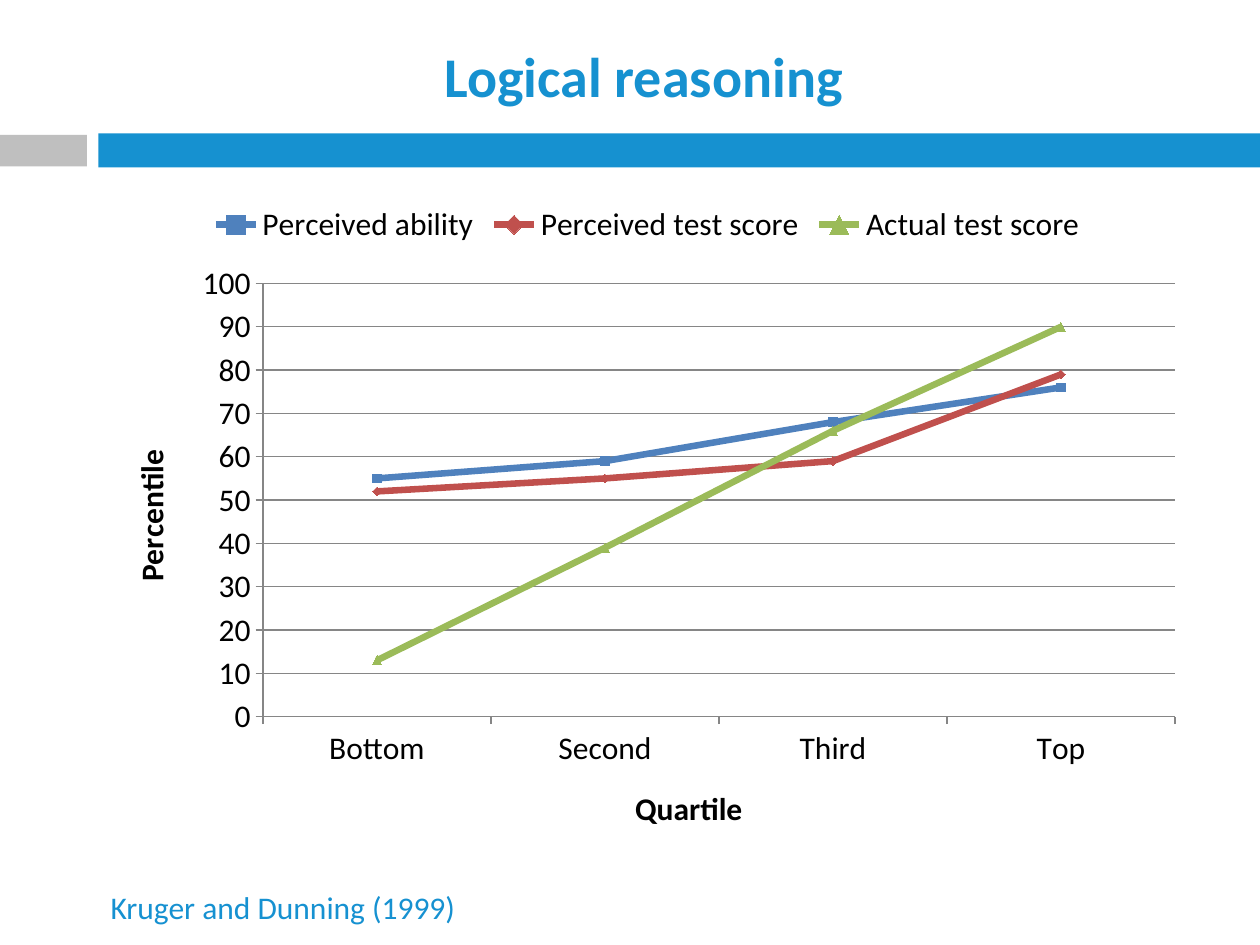
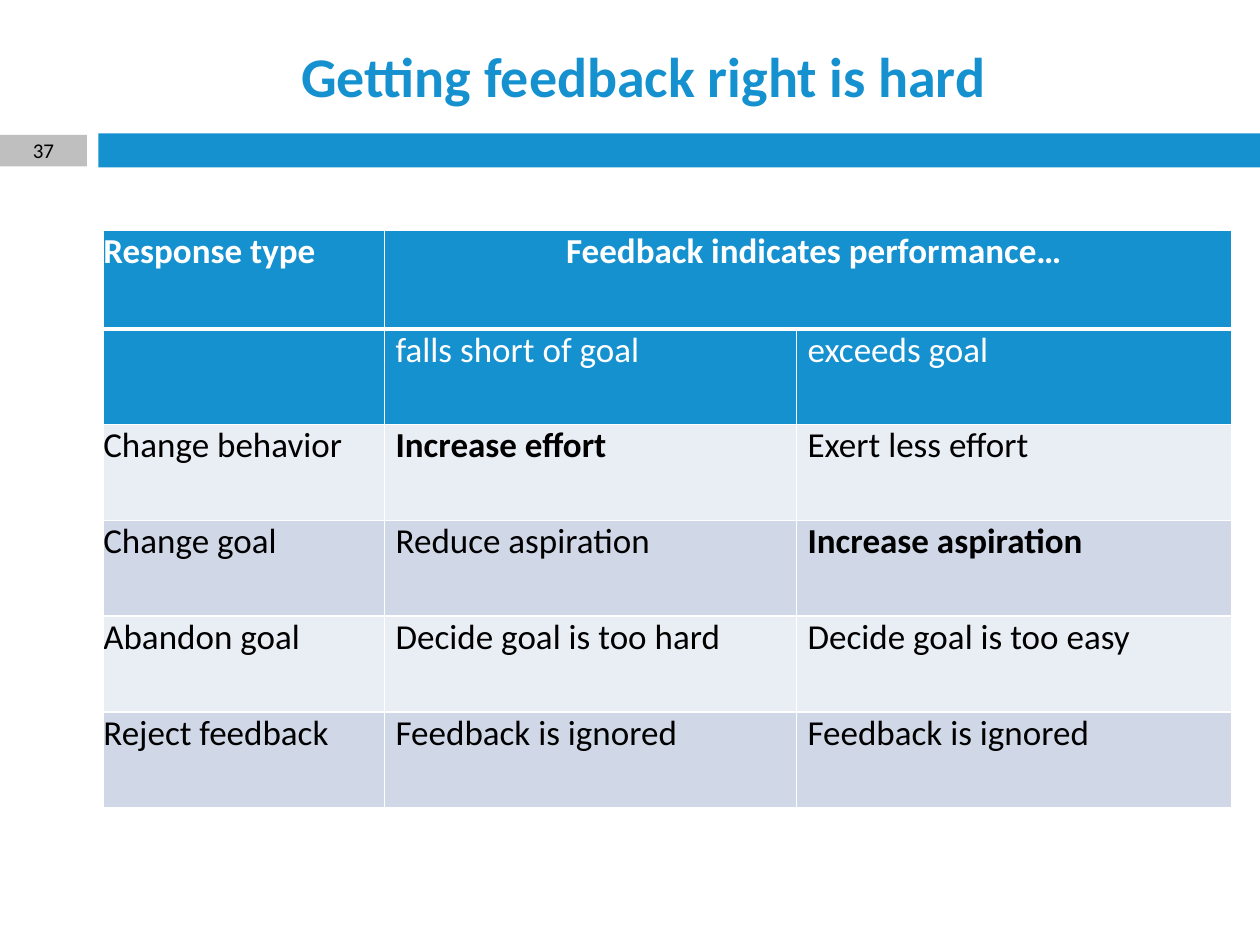
from lxml import etree
from pptx import Presentation
from pptx.chart.data import CategoryChartData
from pptx.dml.color import RGBColor
from pptx.enum.chart import XL_CHART_TYPE, XL_LEGEND_POSITION, XL_MARKER_STYLE, XL_TICK_MARK
from pptx.enum.shapes import MSO_SHAPE
from pptx.enum.text import MSO_ANCHOR, PP_ALIGN
from pptx.oxml import parse_xml
from pptx.oxml.ns import nsdecls, qn
from pptx.util import Inches, Pt

LINE_CHART = XL_CHART_TYPE.LINE_MARKERS
LEGEND_TOP = XL_LEGEND_POSITION.TOP
TICK_OUT = XL_TICK_MARK.OUTSIDE
RECTANGLE = MSO_SHAPE.RECTANGLE
TOP, MIDDLE = MSO_ANCHOR.TOP, MSO_ANCHOR.MIDDLE
LEFT, CENTER = PP_ALIGN.LEFT, PP_ALIGN.CENTER
MARKERS = (XL_MARKER_STYLE.SQUARE, XL_MARKER_STYLE.DIAMOND, XL_MARKER_STYLE.TRIANGLE)

FONT = "Calibri"
BLUE, GREY, WHITE, BLACK = "1691D0", "BFBFBF", "FFFFFF", "000000"
CITATION_BLUE, GRID_GREY = "1691D1", "868686"
ROW_FILLS = ("E9EDF4", "D0D8E8")
BAND = (0.78, 1.06, 9.22, 0.27)
NUMBER_TAB = (0, 1.07, 0.69, 0.25)
TITLE_BOX = (0.78, 0.26, 8.66, 0.68)


def color(hex_string):
    return RGBColor.from_string(hex_string)


def inches(box):
    return [Inches(length) for length in box]


def set_font(font, size, hex_string, bold=False):
    font.name, font.size, font.bold = FONT, Pt(size), bold
    font.color.rgb = color(hex_string)


class SlideMaker:
    def __init__(self):
        self.deck = Presentation()
        self.deck.slide_width, self.deck.slide_height = Inches(10), Inches(7.5)
        self.page = None

    def start_page(self, title):
        self.page = self.deck.slides.add_slide(self.deck.slide_layouts[6])
        self.bar(BAND, BLUE)
        self.bar(NUMBER_TAB, GREY)
        self.text(title, TITLE_BOX, 32, BLUE, bold=True, align=CENTER, anchor=MIDDLE)

    def bar(self, box, fill):
        shape = self.page.shapes.add_shape(RECTANGLE, *inches(box))
        shape.shadow.inherit = False
        shape.fill.solid()
        shape.fill.fore_color.rgb = color(fill)
        shape.line.fill.background()

    def text(self, words, box, size, hex_string, bold=False, align=LEFT, anchor=TOP):
        frame = self.page.shapes.add_textbox(*inches(box)).text_frame
        frame.word_wrap = True
        frame.vertical_anchor = anchor
        para = frame.paragraphs[0]
        para.text, para.alignment = words, align
        set_font(para.font, size, hex_string, bold)

    def line_chart(self, box, categories, series, axis_titles, plot_area):
        data = CategoryChartData()
        data.categories = categories
        for name, values, _ in series:
            data.add_series(name, values)
        chart = self.page.shapes.add_chart(LINE_CHART, *inches(box), data).chart
        set_font(chart.font, 18, BLACK)
        chart.has_title = False
        chart.has_legend = True
        chart.legend.position = LEGEND_TOP
        chart.legend.include_in_layout = False
        chart.plots[0].vary_by_categories = False

        # Axes
        for axis, title in zip((chart.category_axis, chart.value_axis), axis_titles):
            axis.major_tick_mark = TICK_OUT
            axis.format.line.color.rgb = color(GRID_GREY)
            para = axis.axis_title.text_frame.paragraphs[0]
            para.text = title
            set_font(para.font, 18, BLACK, bold=True)
        values_axis = chart.value_axis
        values_axis.minimum_scale, values_axis.maximum_scale = 0, 100
        values_axis.major_unit = 10
        values_axis.major_gridlines.format.line.color.rgb = color(GRID_GREY)

        # Lines and markers
        for line, (_, _, hex_string), marker in zip(chart.plots[0].series, series, MARKERS):
            line.smooth = False
            line.format.line.width = Pt(3.75)
            line.format.line.color.rgb = color(hex_string)
            line.marker.style, line.marker.size = marker, 5
            line.marker.format.fill.solid()
            line.marker.format.fill.fore_color.rgb = color(hex_string)
            line.marker.format.line.color.rgb = color(hex_string)

        # Fixed inner plot area, as fractions of the chart
        area = chart.plots[0]._element.getparent() if hasattr(chart.plots[0], "_element") \
            else values_axis._element.getparent()
        for old in area.findall(qn("c:layout")):
            area.remove(old)
        layout = parse_xml(f"<c:layout {nsdecls('c')}><c:manualLayout/></c:layout>")
        settings = [("layoutTarget", "inner"), ("xMode", "edge"), ("yMode", "edge")]
        settings += zip("xywh", plot_area)
        for tag, value in settings:
            etree.SubElement(layout[0], qn(f"c:{tag}")).set("val", str(value))
        area.insert(0, layout)

    def table(self, corner, widths, heights, rows, bold_cells):
        size = (sum(widths), sum(heights))
        table = self.page.shapes.add_table(
            len(rows), len(widths), *inches(corner + size)).table
        for column, width in zip(table.columns, widths):
            column.width = Inches(width)
        for row, height in zip(table.rows, heights):
            row.height = Inches(height)
        table.cell(0, 1).merge(table.cell(0, 2))
        for r, row in enumerate(rows):
            for c, words in enumerate(row):
                header = r < 2
                cell = table.cell(r, c)
                cell.fill.solid()
                cell.fill.fore_color.rgb = color(BLUE if header else ROW_FILLS[r % 2])
                cell.margin_left = cell.margin_right = 0
                cell.margin_top = cell.margin_bottom = 0
                self.borders(cell, top=3 if r == 1 else 1, bottom=3 if r == 0 else 1)
                para = cell.text_frame.paragraphs[0]
                para.text = words
                para.space_after = Pt(4)
                para.alignment = CENTER if (r, c) == (0, 1) else LEFT
                if c:
                    para._p.get_or_add_pPr().set("marL", str(Inches(0.09)))
                set_font(para.font, 20, WHITE if header else BLACK,
                         bold=r == 0 or (r, c) in bold_cells)

    def borders(self, cell, top, bottom):
        properties = cell._tc.get_or_add_tcPr()
        sides = (("L", 1), ("R", 1), ("T", top), ("B", bottom))
        for position, (side, width) in enumerate(sides):
            properties.insert(position, parse_xml(
                f'<a:ln{side} {nsdecls("a")} w="{Pt(width)}"><a:solidFill>'
                f'<a:srgbClr val="{WHITE}"/></a:solidFill></a:ln{side}>'))


def main():
    maker = SlideMaker()

    # Perceived against actual scores
    maker.start_page("Logical reasoning")
    maker.line_chart(
        (0.78, 1.51, 8.72, 5.29),
        ("Bottom", "Second", "Third", "Top"),
        (("Perceived ability", (55, 59, 68, 76), "4F81BD"),
         ("Perceived test score", (52, 55, 59, 79), "C0504D"),
         ("Actual test score", (13, 39, 66, 90), "9BBB59")),
        axis_titles=("Quartile", "Percentile"),
        plot_area=(0.15, 0.14, 0.83, 0.65))
    maker.text("Kruger and Dunning (1999)", (0.78, 7, 3.92, 0.4), 18, CITATION_BLUE)

    # Responses to feedback
    maker.start_page("Getting feedback right is hard")
    maker.table(
        (0.82, 1.83), (2.23, 3.27, 3.46), (0.78,) + (0.76,) * 5,
        (("Response type", "Feedback indicates performance…", ""),
         ("", "falls short of goal", "exceeds goal"),
         ("Change behavior", "Increase effort", "Exert less effort"),
         ("Change goal", "Reduce aspiration", "Increase aspiration"),
         ("Abandon goal", "Decide goal is too hard", "Decide goal is too easy"),
         ("Reject feedback", "Feedback is ignored", "Feedback is ignored")),
        bold_cells={(2, 1), (3, 2)})
    maker.text("37", NUMBER_TAB, 12, BLACK, align=CENTER, anchor=MIDDLE)

    maker.deck.save("out.pptx")


if __name__ == "__main__":
    main()
